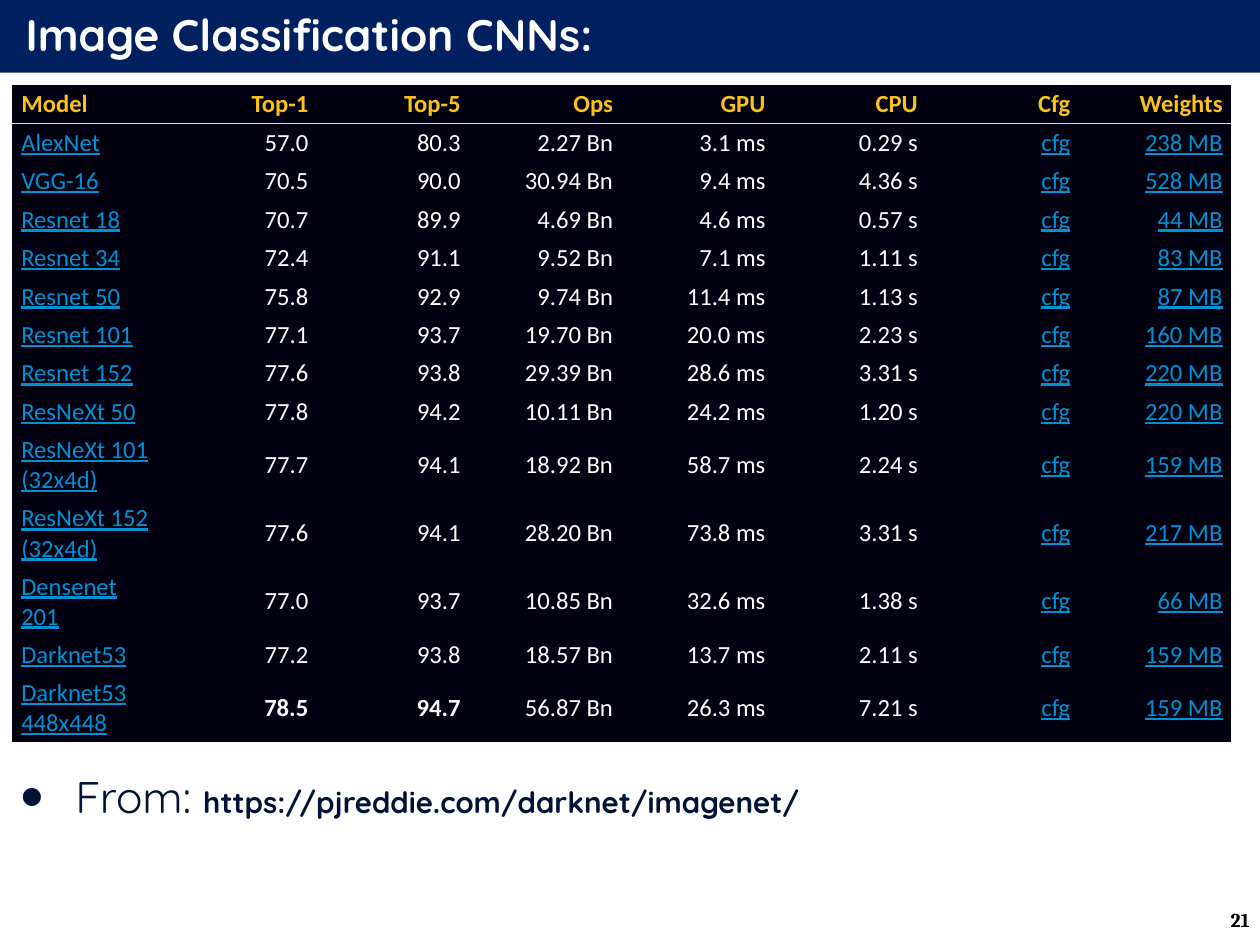
from collections import namedtuple

from lxml.etree import SubElement
from pptx import Presentation
from pptx.dml.color import RGBColor
from pptx.enum.shapes import MSO_SHAPE
from pptx.enum.text import MSO_ANCHOR, PP_ALIGN
from pptx.oxml.ns import qn
from pptx.util import Inches, Pt

Box = namedtuple("Box", "left top width height")

COLORS = {
    "banner": "002060",
    "white": "FFFFFF",
    "ink": "001337",
    "black": "000000",
    "table": "000011",
    "heading": "F9C31B",
    "link": "0092D2",
    "rule": "D9D9D9",
}
NO_STYLE = "{2D5ABB26-0587-4C30-8999-92F81FD0307C}"
HEADINGS = ("Model", "Top-1", "Top-5", "Ops", "GPU", "CPU", "Cfg", "Weights")
LINK_COLUMNS = ("Model", "Cfg", "Weights")
BEST_SCORES = ("78.5", "94.7")
MODELS = [
    ("AlexNet", "57.0", "80.3", "2.27 Bn", "3.1 ms", "0.29 s", "238 MB"),
    ("VGG-16", "70.5", "90.0", "30.94 Bn", "9.4 ms", "4.36 s", "528 MB"),
    ("Resnet 18", "70.7", "89.9", "4.69 Bn", "4.6 ms", "0.57 s", "44 MB"),
    ("Resnet 34", "72.4", "91.1", "9.52 Bn", "7.1 ms", "1.11 s", "83 MB"),
    ("Resnet 50", "75.8", "92.9", "9.74 Bn", "11.4 ms", "1.13 s", "87 MB"),
    ("Resnet 101", "77.1", "93.7", "19.70 Bn", "20.0 ms", "2.23 s", "160 MB"),
    ("Resnet 152", "77.6", "93.8", "29.39 Bn", "28.6 ms", "3.31 s", "220 MB"),
    ("ResNeXt 50", "77.8", "94.2", "10.11 Bn", "24.2 ms", "1.20 s", "220 MB"),
    ("ResNeXt 101 (32x4d)", "77.7", "94.1", "18.92 Bn", "58.7 ms", "2.24 s", "159 MB"),
    ("ResNeXt 152 (32x4d)", "77.6", "94.1", "28.20 Bn", "73.8 ms", "3.31 s", "217 MB"),
    ("Densenet 201", "77.0", "93.7", "10.85 Bn", "32.6 ms", "1.38 s", "66 MB"),
    ("Darknet53", "77.2", "93.8", "18.57 Bn", "13.7 ms", "2.11 s", "159 MB"),
    ("Darknet53 448x448", "78.5", "94.7", "56.87 Bn", "26.3 ms", "7.21 s", "159 MB"),
]
ONE_LINE_LENGTH = 10


def grid(count):
    """Return the length of a number of grid steps, ten to the inch."""
    return Inches(count / 10)


def place(box):
    """Turn a box in grid steps into slide lengths."""
    return [grid(length) for length in box]


def color(name):
    """Look up a named colour."""
    return RGBColor.from_string(COLORS[name])


def set_font(font, face, size, color_name, bold=False):
    """Set face, size, colour and weight of a font."""
    font.name, font.size, font.bold = face, Pt(size), bold
    font.color.rgb = color(color_name)


def clear_margins(frame):
    """Wrap a text frame and remove its insets."""
    frame.word_wrap = True
    frame.margin_left = frame.margin_right = frame.margin_top = frame.margin_bottom = 0


def add_banner(page, box, text):
    """Draw the title banner."""
    banner = page.shapes.add_shape(MSO_SHAPE.RECTANGLE, *place(box))
    banner.shadow.inherit = False
    banner.fill.solid()
    banner.fill.fore_color.rgb = color("banner")
    banner.line.fill.background()
    frame = banner.text_frame
    clear_margins(frame)
    frame.margin_left = grid(2.9)
    frame.vertical_anchor = MSO_ANCHOR.MIDDLE
    para = frame.paragraphs[0]
    para.text = text
    para.alignment = PP_ALIGN.LEFT
    set_font(para.font, "Quicksand", 36, "white", bold=True)


def add_rule(cell, side):
    """Draw a thin rule on one side of a cell."""
    properties = cell._tc.get_or_add_tcPr()
    line = SubElement(properties, qn(f"a:{side}"), w=str(Pt(0.86)))
    fill = SubElement(line, qn("a:solidFill"))
    SubElement(fill, qn("a:srgbClr"), val=COLORS["rule"])


def fill_cell(cell, text, heading, is_header):
    """Write and style one cell of the model table."""
    is_link = heading in LINK_COLUMNS and not is_header
    cell.vertical_anchor = MSO_ANCHOR.MIDDLE
    para = cell.text_frame.paragraphs[0]
    para.text = text
    para.alignment = PP_ALIGN.LEFT if heading == "Model" else PP_ALIGN.RIGHT
    color_name = "heading" if is_header else "link" if is_link else "white"
    set_font(para.font, "Calibri", 20, color_name, is_header or text in BEST_SCORES)
    para.font.underline = is_link
    if is_header:
        add_rule(cell, "lnB")
    cell.fill.solid()
    cell.fill.fore_color.rgb = color("table")


def add_model_table(page, box):
    """Draw the table of models, with taller rows for long names."""
    rows = [HEADINGS] + [(*model[:-1], "cfg", model[-1]) for model in MODELS]
    graphic = page.shapes.add_table(len(rows), len(HEADINGS), *place(box))
    table = graphic.table
    table.first_row = table.horz_banding = False
    table._tbl.tblPr.find(qn("a:tableStyleId")).text = NO_STYLE
    for column in table.columns:
        column.width = grid(box.width / len(HEADINGS))
    for row_index, row in enumerate(rows):
        height = 4.31 if len(row[0]) <= ONE_LINE_LENGTH else 7.7
        table.rows[row_index].height = grid(height)
        for column_index, (heading, text) in enumerate(zip(HEADINGS, row)):
            fill_cell(table.cell(row_index, column_index), text, heading, row_index == 0)


def add_source_note(page, box, label, address):
    """Write the bulleted source of the figures."""
    frame = page.shapes.add_textbox(*place(box)).text_frame
    clear_margins(frame)
    para = frame.paragraphs[0]
    properties = para._p.get_or_add_pPr()
    properties.set("marL", str(grid(6.2)))
    properties.set("indent", str(-grid(6.2)))
    SubElement(properties, qn("a:buSzPct"), val="150000")
    SubElement(properties, qn("a:buFont"), typeface="Arial")
    SubElement(properties, qn("a:buChar"), char="•")
    for text, size, bold in ((label, 36, False), (address, 24, True)):
        span = para.add_run()
        span.text = text
        set_font(span.font, "Quicksand", size, "ink", bold)


def add_page_number(page, box, number):
    """Write the page number at the lower right."""
    frame = page.shapes.add_textbox(*place(box)).text_frame
    frame.word_wrap = True
    frame.vertical_anchor = MSO_ANCHOR.MIDDLE
    para = frame.paragraphs[0]
    para.text = number
    para.alignment = PP_ALIGN.RIGHT
    set_font(para.font, "Cambria", 16, "black", bold=True)


def main():
    """Build the slide and save the deck."""
    deck = Presentation()
    deck.slide_width, deck.slide_height = grid(142.2), grid(106.7)
    page = deck.slides.add_slide(deck.slide_layouts[6])
    add_banner(page, Box(0, -0.6, 142.2, 8.8), "Image Classification CNNs:")
    add_page_number(page, Box(108.8, 101, 33.2, 5.7), "21")
    add_source_note(page, Box(2.3, 86.9, 138.5, 6.5), "From: ", "https://pjreddie.com/darknet/imagenet/")
    add_model_table(page, Box(1.4, 9.6, 137.6, 73.9))
    deck.save("out.pptx")


if __name__ == "__main__":
    main()
